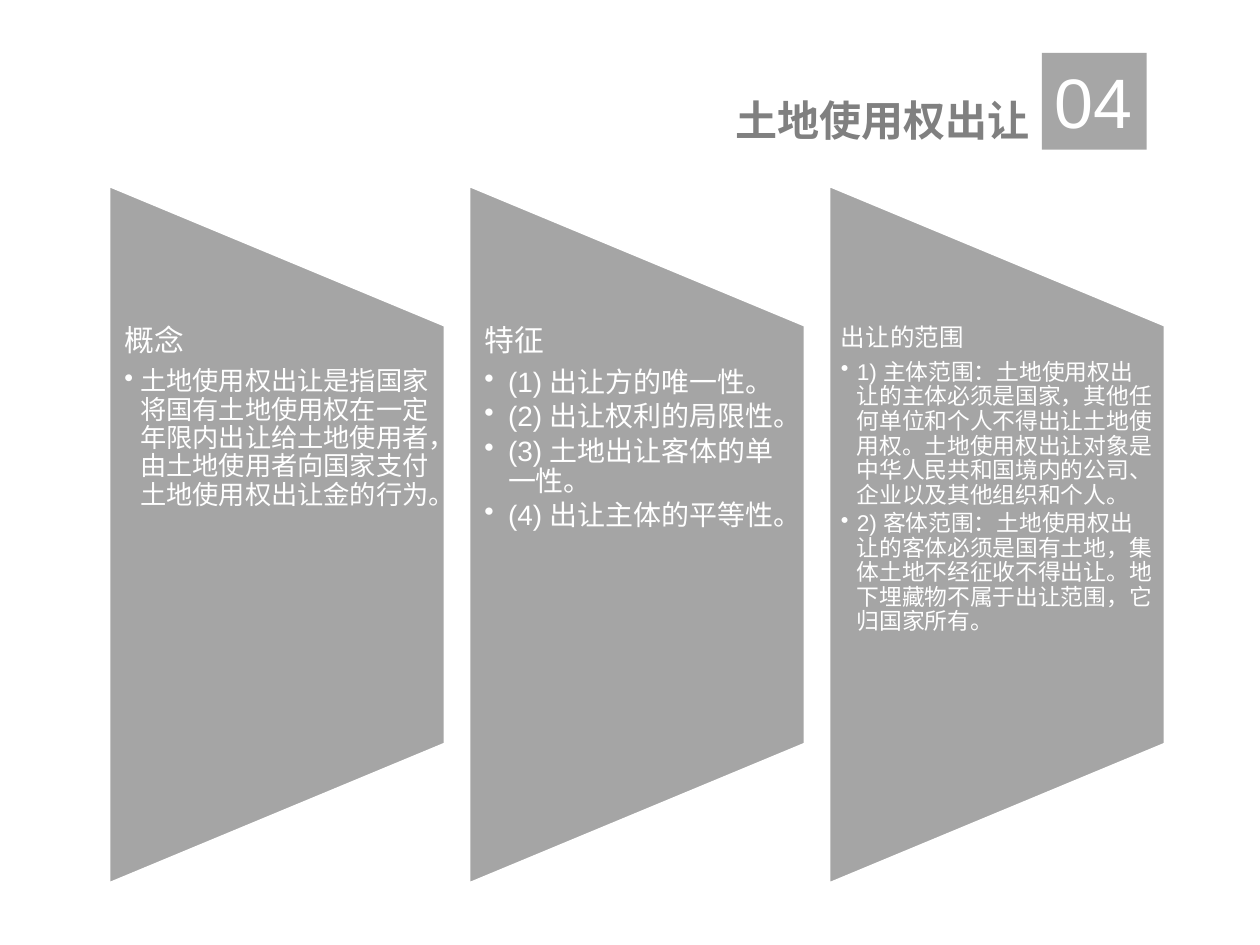
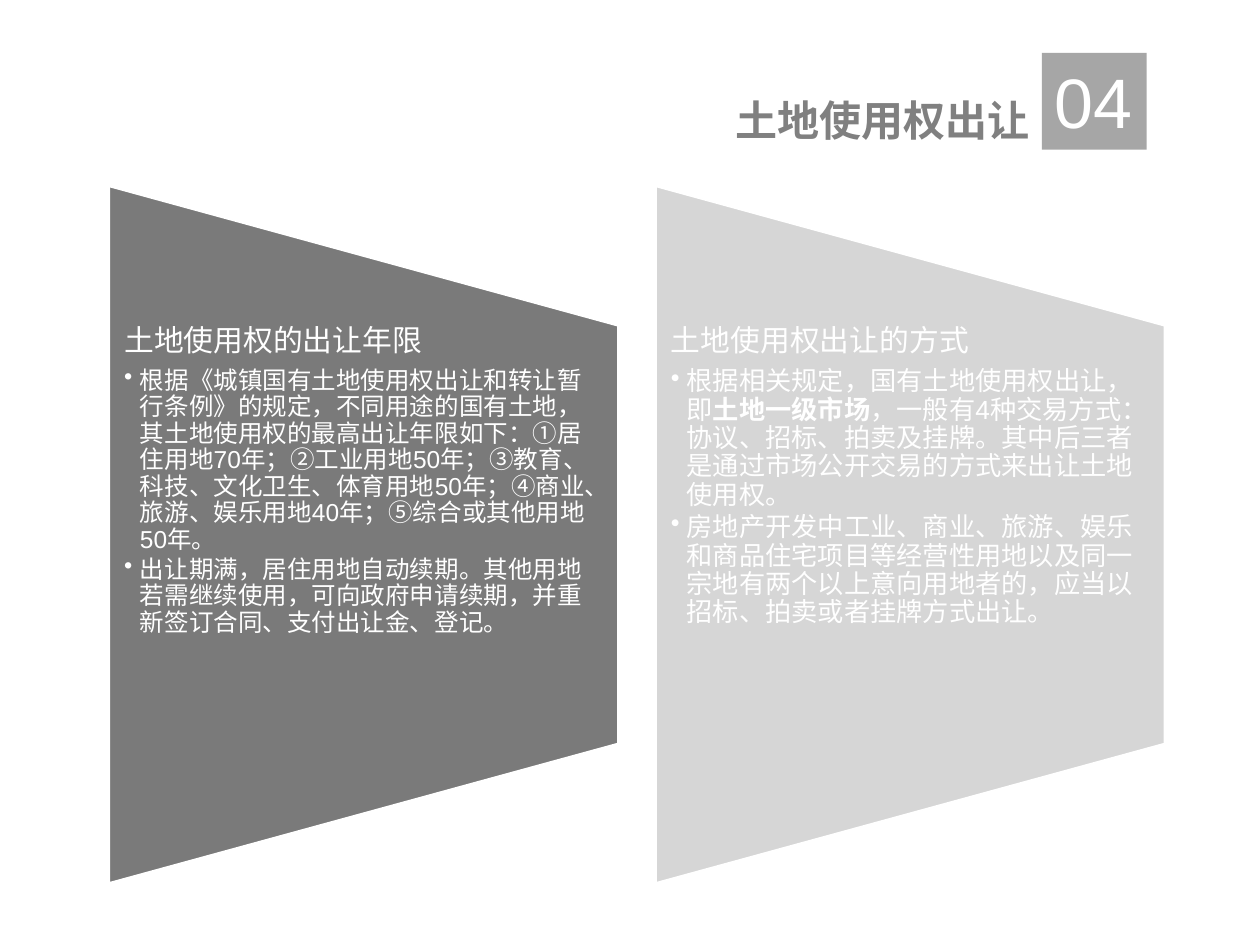
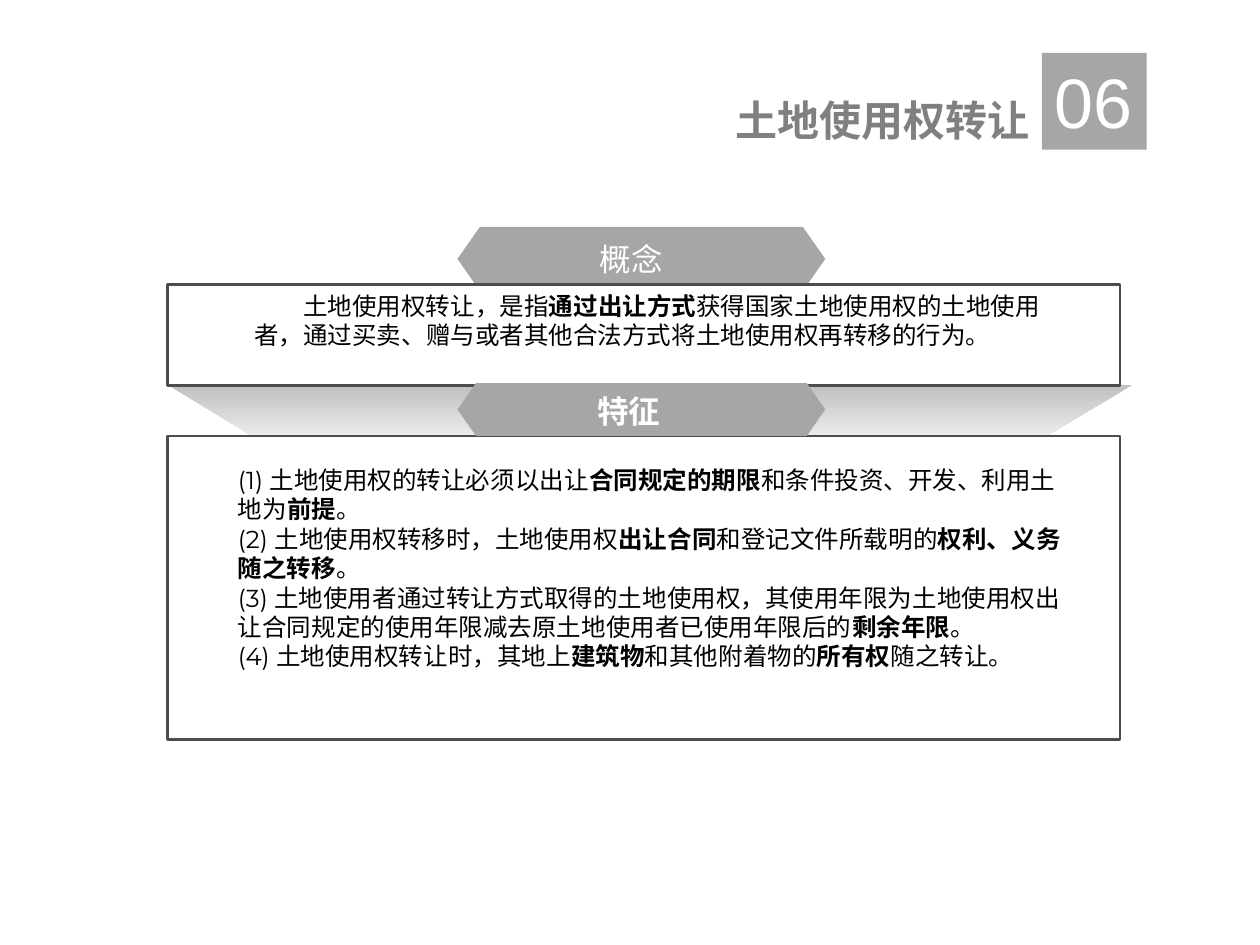
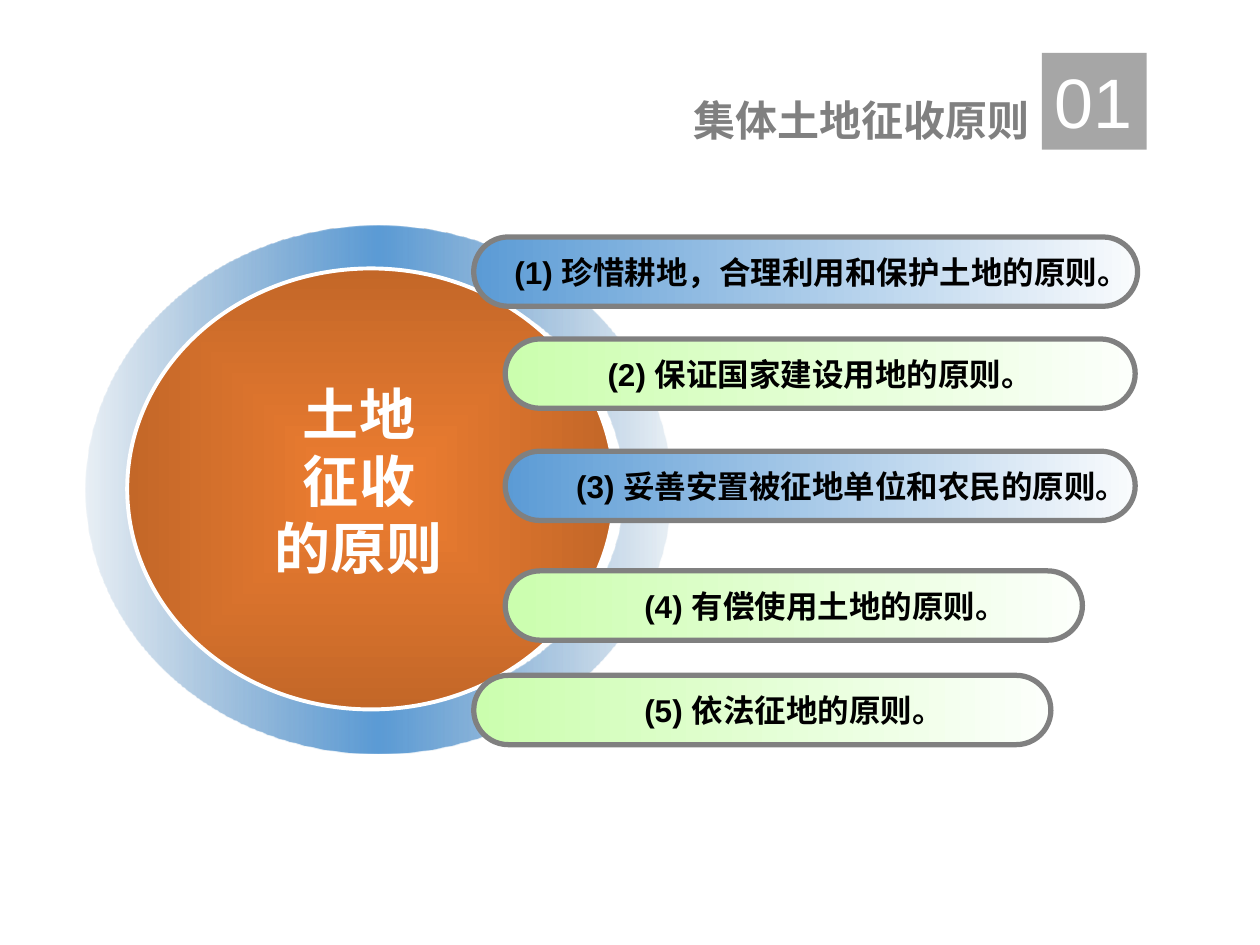
from dataclasses import dataclass

from pptx import Presentation
from pptx import util as u
from pptx.dml import color as hue
from pptx.enum import shapes as kinds
from pptx.enum import text as txt
from pptx.oxml import parse_xml
from pptx.oxml import ns

Pt = u.Pt
Form = kinds.MSO_SHAPE
Side = txt.PP_ALIGN
Hold = txt.MSO_ANCHOR


@dataclass(frozen=True)
class Theme:
    white: str = "FFFFFF"
    black: str = "000000"
    grey: str = "808080"
    badge: str = "A6A6A6"
    panel: str = "A5A5A5"
    dark: str = "7A7A7A"
    pale: str = "D6D6D6"
    frame: str = "4D4D4D"
    silver: str = "C0C0C0"
    blue: str = "5B9BD5"
    mist: str = "F9FBFD"
    steel: str = "4C82B3"
    green: str = "CBFEAE"
    mint: str = "FCFFFB"
    flame: str = "ED7D31"
    rust: str = "C36728"
    sans: str = "Arial"
    song: str = "Noto Sans CJK SC"
    serif: str = "Times New Roman"
    body: str = "Montserrat"
    title: float = 24
    number: float = 40
    label: float = 18
    prose: float = 14
    hero: float = 32


@dataclass(frozen=True)
class Box:
    x: float
    y: float
    w: float
    h: float

    def place(self) -> tuple:
        return Pt(self.x), Pt(self.y), Pt(self.w), Pt(self.h)


@dataclass(frozen=True)
class Panel:
    head: str
    points: str
    tone: str
    big: float = 17
    small: float = 15
    hang: float = 9
    pad: float = 8.5


@dataclass(frozen=True)
class Pill:
    text: str
    x: float
    y: float
    w: float
    tones: tuple
    shift: float = 0


@dataclass(frozen=True)
class Stop:
    at: int
    tone: str
    alpha: int = 100


T = Theme()
COLD = (T.blue, T.mist)
FRESH = (T.green, T.mint)

TITLE = Box(311, 50.4, 284.4, 36)
BADGE = Box(595.4, 30.2, 59.8, 55.4)
STAGE = Box(62.5, 106.5, 603, 398)
GAP = 0.075
FOLD = 0.2

TERMS = (
    Panel("概念", "土地使用权出让是指国家将国有土地使用权在一定年限内出让给土地使用者，"
          "由土地使用者向国家支付土地使用权出让金的行为。", T.panel),
    Panel("特征", "(1) 出让方的唯一性。\n(2) 出让权利的局限性。\n"
          "(3) 土地出让客体的单一性。\n(4) 出让主体的平等性。",
          T.panel, small=16, hang=13.5),
    Panel("出让的范围", "1) 主体范围：土地使用权出让的主体必须是国家，其他任何单位和个人"
          "不得出让土地使用权。土地使用权出让对象是中华人民共和国境内的公司、"
          "企业以及其他组织和个人。\n"
          "2) 客体范围：土地使用权出让的客体必须是国有土地，集体土地不经征收不得出让。"
          "地下埋藏物不属于出让范围，它归国家所有。",
          T.panel, big=14, small=13, pad=6.5),
)

RULES = (
    Panel("土地使用权的出让年限", "根据《城镇国有土地使用权出让和转让暂行条例》的规定，"
          "不同用途的国有土地，其土地使用权的最高出让年限如下：①居住用地70年；"
          "②工业用地50年；③教育、科技、文化卫生、体育用地50年；"
          "④商业、旅游、娱乐用地40年；⑤综合或其他用地50年。\n"
          "出让期满，居住用地自动续期。其他用地若需继续使用，可向政府申请续期，"
          "并重新签订合同、支付出让金、登记。", T.dark, small=14),
    Panel("土地使用权出让的方式", "根据相关规定，国有土地使用权出让，即*土地一级市场*，"
          "一般有4种交易方式：协议、招标、拍卖及挂牌。"
          "其中后三者是通过市场公开交易的方式来出让土地使用权。\n"
          "房地产开发中工业、商业、旅游、娱乐和商品住宅项目等经营性用地以及"
          "同一宗地有两个以上意向用地者的，应当以招标、拍卖或者挂牌方式出让。", T.pale),
)

CONCEPT = ("土地使用权转让，是指*通过出让方式*获得国家土地使用权的土地使用者，"
           "通过买卖、赠与或者其他合法方式将土地使用权再转移的行为。")
TRAITS = ("(1) 土地使用权的转让必须以出让*合同规定的期限*和条件投资、开发、"
          "利用土地为*前提*。\n"
          "(2) 土地使用权转移时，土地使用权*出让合同*和登记文件所载明的"
          "*权利、义务随之转移*。\n"
          "(3) 土地使用者通过转让方式取得的土地使用权，其使用年限为土地使用权"
          "出让合同规定的使用年限减去原土地使用者已使用年限后的*剩余年限*。\n"
          "(4) 土地使用权转让时，其地上*建筑物*和其他附着物的*所有权*随之转让。")

PILLS = (
    Pill("(1) 珍惜耕地，合理利用和保护土地的原则。", 270.7, 135.4, 379.4, COLD, 18),
    Pill("(2) 保证国家建设用地的原则。", 288.7, 193.7, 360, FRESH),
    Pill("(3) 妥善安置被征地单位和农民的原则。", 288.7, 257.8, 360, COLD, 36),
    Pill("(4) 有偿使用土地的原则。", 288.7, 326.2, 329.8, FRESH, 36),
    Pill("(5) 依法征地的原则。", 270.7, 385.9, 329.8, FRESH, 36),
)


def rgb(tone: str) -> hue.RGBColor:
    return hue.RGBColor.from_string(tone)


def write(frame, text: str, *, size: float, font: str = T.sans, tone: str = T.black,
          bold: bool = False, side=Side.LEFT, lead: float | None = None,
          after: float = 0, left: float = 0, first: float = 0,
          bullet: str = "", shade: bool = False) -> None:
    for line in text.split("\n"):
        para = frame.add_paragraph() if frame.text else frame.paragraphs[0]
        para.alignment = side
        para.line_spacing = lead
        para.space_after = Pt(after)
        props = para._p.get_or_add_pPr()
        props.set("marL", str(Pt(left)))
        props.set("indent", str(Pt(first)))
        if bullet:
            props.append(parse_xml(f'<a:buChar {ns.nsdecls("a")} char="{bullet}"/>'))
        for rank, part in enumerate(line.split("*")):
            run = para.add_run()
            run.text = part
            run.font.size = Pt(size)
            run.font.bold = bold or rank % 2 == 1
            run.font.color.rgb = rgb(tone)
            if shade:
                run._r.get_or_add_rPr().append(parse_xml(
                    f'<a:effectLst {ns.nsdecls("a")}><a:outerShdw dist="35921" '
                    f'dir="2700000"><a:srgbClr val="{T.black}"/></a:outerShdw>'
                    '</a:effectLst>'))
            run.font.name = font


def setup(frame, *, wrap: bool = True, grow: bool = False, hold=Hold.TOP,
          pad: tuple = (7.2, 3.6, 7.2, 3.6)) -> None:
    frame.word_wrap = wrap
    if grow:
        frame.auto_size = txt.MSO_AUTO_SIZE.SHAPE_TO_FIT_TEXT
    frame.vertical_anchor = hold
    (frame.margin_left, frame.margin_top,
     frame.margin_right, frame.margin_bottom) = map(Pt, pad)


def note(slide, box: Box, **style):
    frame = slide.shapes.add_textbox(*box.place()).text_frame
    setup(frame, **style)
    return frame


def paint(shape, fill: str = "", line: str = "", width: float = 1) -> None:
    shape.shadow.inherit = False
    if fill:
        shape.fill.solid()
        shape.fill.fore_color.rgb = rgb(fill)
    if line:
        shape.line.color.rgb = rgb(line)
        shape.line.width = Pt(width)
    else:
        shape.line.fill.background()


def draw(slide, form, box: Box, fill: str = "", line: str = "", width: float = 1):
    shape = slide.shapes.add_shape(form, *box.place())
    paint(shape, fill, line, width)
    return shape


def blend(shape, stops: tuple, angle: int = 0, focal: bool = False) -> None:
    shape.fill.gradient()
    old = shape._element.spPr.find(ns.qn("a:gradFill"))
    marks = "".join(
        f'<a:gs pos="{s.at * 1000}"><a:srgbClr val="{s.tone}">'
        f'<a:alpha val="{s.alpha * 1000}"/></a:srgbClr></a:gs>' for s in stops)
    course = ('<a:path path="shape"><a:fillToRect l="50000" t="50000" '
              'r="50000" b="50000"/></a:path>' if focal
              else f'<a:lin ang="{angle * 60000}" scaled="0"/>')
    old.getparent().replace(old, parse_xml(
        f'<a:gradFill {ns.nsdecls("a")} rotWithShape="1">'
        f'<a:gsLst>{marks}</a:gsLst>{course}</a:gradFill>'))


def start(deck, title: str, number: str):
    slide = deck.slides.add_slide(deck.slide_layouts[6])
    write(note(slide, TITLE, grow=True), title, size=T.title, font=T.song,
          tone=T.grey, bold=True, side=Side.RIGHT)
    badge = draw(slide, Form.RECTANGLE, BADGE, T.badge)
    setup(badge.text_frame, wrap=False, grow=True)
    write(badge.text_frame, number, size=T.number, tone=T.white)
    return slide


def fan(slide, panels: tuple[Panel, ...]) -> None:
    count = len(panels)
    wide = STAGE.w / (count + GAP * (count - 1))
    tall = STAGE.h
    for rank, panel in enumerate(panels):
        x = STAGE.x + rank * wide * (1 + GAP)
        turned = Box(x + (wide - tall) / 2, STAGE.y + (tall - wide) / 2, tall, wide)
        shape = draw(slide, Form.FLOWCHART_MANUAL_OPERATION, turned, panel.tone, T.white)
        shape.rotation = 270
        inner = Box(x, STAGE.y + FOLD * tall, wide, tall * (1 - 2 * FOLD))
        frame = note(slide, inner, pad=(panel.pad, 0, panel.pad, 0))
        write(frame, panel.head, size=panel.big, tone=T.white, lead=0.9,
              after=panel.big * 0.35)
        write(frame, panel.points, size=panel.small, tone=T.white, lead=0.9,
              after=panel.small * 0.15, left=panel.hang, first=-panel.hang, bullet="•")


def tab(slide, y: float, tall: float) -> None:
    shape = draw(slide, Form.HEXAGON, Box(261.4, y, 210.2, tall), T.badge)
    shape.adjustments[0] = 0.35


def card(slide, y: float, tall: float) -> None:
    draw(slide, Form.RECTANGLE, Box(95.8, y, 544.3, tall), T.white, T.frame, 1.5)


def transfer(slide) -> None:
    pen = slide.shapes.build_freeform(95.8, 220.3, scale=float(Pt(1)))
    pen.add_line_segments([(166.3, 262.1), (576, 262.1), (647.3, 220.3)])
    slope = pen.convert_to_shape()
    paint(slope)
    blend(slope, (Stop(0, T.silver), Stop(100, T.white)), 90)
    tab(slide, 129.6, 36.7)
    write(note(slide, Box(335.5, 133.9, 80.6, 28.8), grow=True), "概念",
          size=T.label, tone=T.white)
    card(slide, 162.7, 57.6)
    card(slide, 249.1, 173.5)
    tab(slide, 218.9, 30.2)
    write(note(slide, Box(272.2, 220.3, 187.9, 28.8), grow=True), "特征",
          size=T.label, font=T.serif, tone=T.white, bold=True, left=62)
    write(note(slide, Box(138.2, 162.7, 476.6, 41), grow=True), CONCEPT,
          size=T.prose, font=T.body, first=2 * T.prose)
    write(note(slide, Box(128.9, 262.1, 486.7, 126), grow=True), TRAITS,
          size=T.prose, font=T.body)


def wheel(slide) -> None:
    ring = draw(slide, Form.DONUT, Box(49, 128.9, 334.1, 301.7))
    ring.adjustments[0] = 0.09
    blend(ring, (Stop(0, T.steel, 12), Stop(50, T.blue), Stop(100, T.steel, 12)))
    core = draw(slide, Form.OVAL, Box(72.7, 153.4, 278.6, 252), line=T.white, width=2.25)
    blend(core, (Stop(0, T.flame), Stop(100, T.rust)), focal=True)
    for pill in PILLS:
        bar = draw(slide, Form.ROUNDED_RECTANGLE, Box(pill.x, pill.y, pill.w, 39.6),
                   line=T.grey, width=3)
        bar.adjustments[0] = 0.5
        blend(bar, (Stop(0, pill.tones[0]), Stop(100, pill.tones[1])))
        setup(bar.text_frame, wrap=False, hold=Hold.MIDDLE,
              pad=(7.2 + pill.shift, 3.6, 7.2, 3.6))
        write(bar.text_frame, pill.text, size=T.label, bold=True, side=Side.CENTER)
    write(note(slide, Box(144, 213.1, 122.4, 123.8), grow=True), "土地\n征收\n的原则",
          size=T.hero, tone=T.white, bold=True, side=Side.CENTER, shade=True)


def main() -> None:
    deck = Presentation()
    deck.slide_width, deck.slide_height = Pt(720), Pt(540)
    fan(start(deck, "土地使用权出让", "04"), TERMS)
    fan(start(deck, "土地使用权出让", "04"), RULES)
    transfer(start(deck, "土地使用权转让", "06"))
    wheel(start(deck, "集体土地征收原则", "01"))
    deck.save("out.pptx")


if __name__ == "__main__":
    main()
